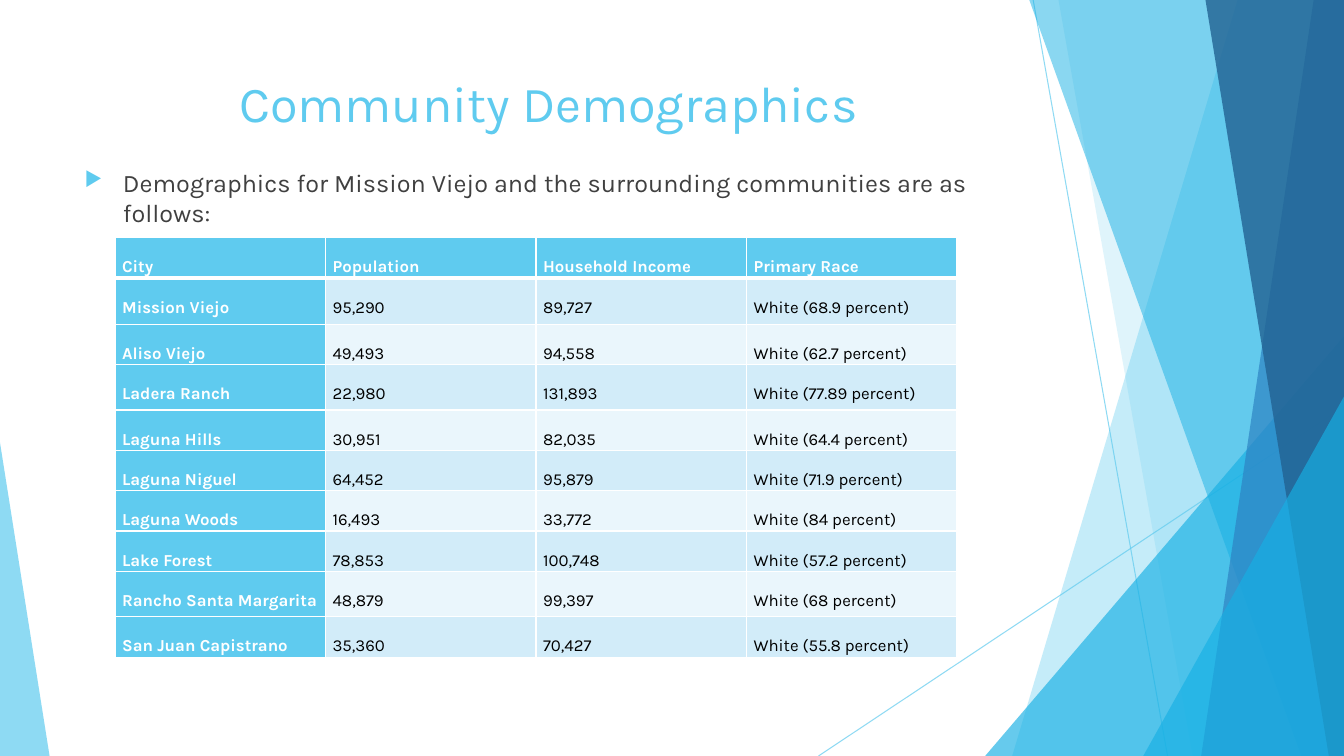
from dataclasses import dataclass

from lxml import etree
from pptx import Presentation
from pptx import util as u
from pptx.dml.color import RGBColor
from pptx.enum import shapes, text
from pptx.oxml import ns

COLUMNS, ROWS = 80, 45
FONT = "Karla"
SKY, AZURE, BLUE, NAVY = "5FCBEF", "17B0E4", "2E83C3", "226292"
WHITE, BLACK, GREY = "FFFFFF", "000000", "404040"
BANDS = ("D2ECF9", "EAF6FC")
BLEED = -0.05


@dataclass
class Ray:
    x1: float
    y1: float
    x2: float
    y2: float


@dataclass
class Facet:
    top_left: float
    bottom_left: float
    color: str
    opacity: int


@dataclass
class Wedge:
    left: float
    top: float
    width: float
    apex: float
    color: str
    opacity: int


RAYS = [Ray(61.5, 0, 69.5, ROWS), Ray(COLUMNS, 24.2, 48.72, ROWS)]

PANES = [
    Facet(73.68, 60.25, SKY, 36),
    Facet(63, 71, SKY, 20),
    Wedge(58.64, 20, 21.36, 1, AZURE, 66),
    Facet(61.25, 77.45, AZURE, 50),
    Facet(78.2, 71.5, BLUE, 70),
    Facet(71.75, 79.1, NAVY, 80),
    Wedge(68.05, 23.6, 11.95, 1, AZURE, 66),
    Wedge(0, 26.35, 2.95, 0, SKY, 70),
]

CITIES = [
    ("City", "Population", "Household Income", "Primary Race"),
    ("Mission Viejo", "95,290", "89,727", "White (68.9 percent)"),
    ("Aliso Viejo", "49,493", "94,558", "White (62.7 percent)"),
    ("Ladera Ranch", "22,980", "131,893", "White (77.89 percent)"),
    ("Laguna Hills", "30,951", "82,035", "White (64.4 percent)"),
    ("Laguna Niguel", "64,452", "95,879", "White (71.9 percent)"),
    ("Laguna Woods", "16,493", "33,772", "White (84 percent)"),
    ("Lake Forest", "78,853", "100,748", "White (57.2 percent)"),
    ("Rancho Santa Margarita", "48,879", "99,397", "White (68 percent)"),
    ("San Juan Capistrano", "35,360", "70,427", "White (55.8 percent)"),
]
ROW_HEIGHTS = (1.6, 2.75, 1.45, 2.7, 1.45, 1.45, 1.3, 1.45, 2.7, 1.45)
CITY_COLUMN = 12.53

prs = Presentation()
prs.slide_width, prs.slide_height = u.Inches(13.333), u.Inches(7.5)


def col(n: float) -> int:
    return round(prs.slide_width * n / COLUMNS)


def row(n: float) -> int:
    return round(prs.slide_height * n / ROWS)


def rgb(color: str) -> RGBColor:
    return RGBColor.from_string(color)


def add_child(parent, tag: str, **attributes):
    return etree.SubElement(parent, ns.qn(tag), attributes)


def set_opacity(element, percent: int) -> None:
    for color in element.iter(ns.qn("a:srgbClr")):
        add_child(color, "a:alpha", val=str(percent * 1000))


def add_run(p, words: str, size: float, color: str, bold: bool = False) -> None:
    r = p.add_run()
    r.text = words
    r.font.name, r.font.size, r.font.bold = FONT, u.Pt(size), bold
    r.font.color.rgb = rgb(color)


def draw_ray(slide, ray: Ray) -> None:
    line = slide.shapes.add_connector(
        shapes.MSO_CONNECTOR.STRAIGHT,
        col(ray.x1), row(ray.y1), col(ray.x2), row(ray.y2))
    line.line.color.rgb = rgb(SKY)
    line.line.width = u.Pt(0.75)
    properties = line._element.spPr
    set_opacity(properties, 70)
    add_child(properties, "a:effectLst")


def draw_pane(slide, pane: Facet | Wedge) -> None:
    if isinstance(pane, Facet):
        outline = slide.shapes.build_freeform(col(pane.top_left), row(BLEED))
        outline.add_line_segments([
            (col(COLUMNS), row(BLEED)),
            (col(COLUMNS), row(ROWS)),
            (col(pane.bottom_left), row(ROWS)),
        ])
        sp = outline.convert_to_shape()
    else:
        sp = slide.shapes.add_shape(
            shapes.MSO_SHAPE.ISOSCELES_TRIANGLE, col(pane.left), row(pane.top),
            col(pane.width), row(ROWS - pane.top))
        sp.adjustments[0] = pane.apex
    sp.shadow.inherit = False
    sp.line.fill.background()
    sp.fill.solid()
    sp.fill.fore_color.rgb = rgb(pane.color)
    set_opacity(sp._element.spPr, pane.opacity)


def draw_title(slide) -> None:
    title = slide.shapes.title
    title.left, title.top, title.width, title.height = (
        col(4.45), row(4), col(56.4), row(8.65))
    tf = title.text_frame
    tf.vertical_anchor = text.MSO_ANCHOR.TOP
    p = tf.paragraphs[0]
    p.alignment = text.PP_ALIGN.CENTER
    add_run(p, "Community Demographics", 36, SKY)
    slide.shapes._spTree.append(title._element)


def draw_body(slide) -> None:
    box = slide.shapes.add_textbox(col(4.45), row(9.65), col(56.4), row(29.95))
    tf = box.text_frame
    tf.word_wrap = True
    p = tf.paragraphs[0]
    p.space_before = u.Pt(10)
    properties = p._p.get_or_add_pPr()
    indent = u.Inches(0.38)
    properties.set("marL", str(indent))
    properties.set("indent", str(-indent))
    add_child(add_child(properties, "a:buClr"), "a:srgbClr", val=SKY)
    add_child(properties, "a:buSzPct", val="80000")
    add_child(properties, "a:buChar", char="▶")
    add_run(p, "Demographics for Mission Viejo and the surrounding "
               "communities are as follows:", 18, GREY)


def set_border(cell, side: str, points: float) -> None:
    line = add_child(cell._tc.get_or_add_tcPr(), f"a:ln{side}", w=str(u.Pt(points)))
    add_child(add_child(line, "a:solidFill"), "a:srgbClr", val=WHITE)


def draw_table(slide) -> None:
    frame = slide.shapes.add_table(
        len(CITIES), len(CITIES[0]), col(6.85), row(14.15),
        col(CITY_COLUMN * len(CITIES[0])), row(sum(ROW_HEIGHTS)))
    table = frame.table
    table.first_col = True
    for column in table.columns:
        column.width = col(CITY_COLUMN)
    for i, (values, height) in enumerate(zip(CITIES, ROW_HEIGHTS)):
        table.rows[i].height = row(height)
        for j, value in enumerate(values):
            cell = table.cell(i, j)
            heading = i == 0 or j == 0
            for side in "LRTB":
                under_header = (i, side) in ((0, "B"), (1, "T"))
                set_border(cell, side, 3 if under_header else 1)
            cell.fill.solid()
            cell.fill.fore_color.rgb = rgb(SKY if heading else BANDS[(i - 1) % 2])
            cell.margin_left = cell.margin_right = u.Inches(0.07)
            cell.margin_top = cell.margin_bottom = 0
            p = cell.text_frame.paragraphs[0]
            p.line_spacing = 2.0
            add_run(p, value, 12, WHITE if heading else BLACK, heading)


def main() -> None:
    slide = prs.slides.add_slide(prs.slide_layouts.get_by_name("Title Only"))
    for ray in RAYS:
        draw_ray(slide, ray)
    for pane in PANES:
        draw_pane(slide, pane)
    draw_title(slide)
    draw_body(slide)
    draw_table(slide)
    prs.save("out.pptx")


if __name__ == "__main__":
    main()
